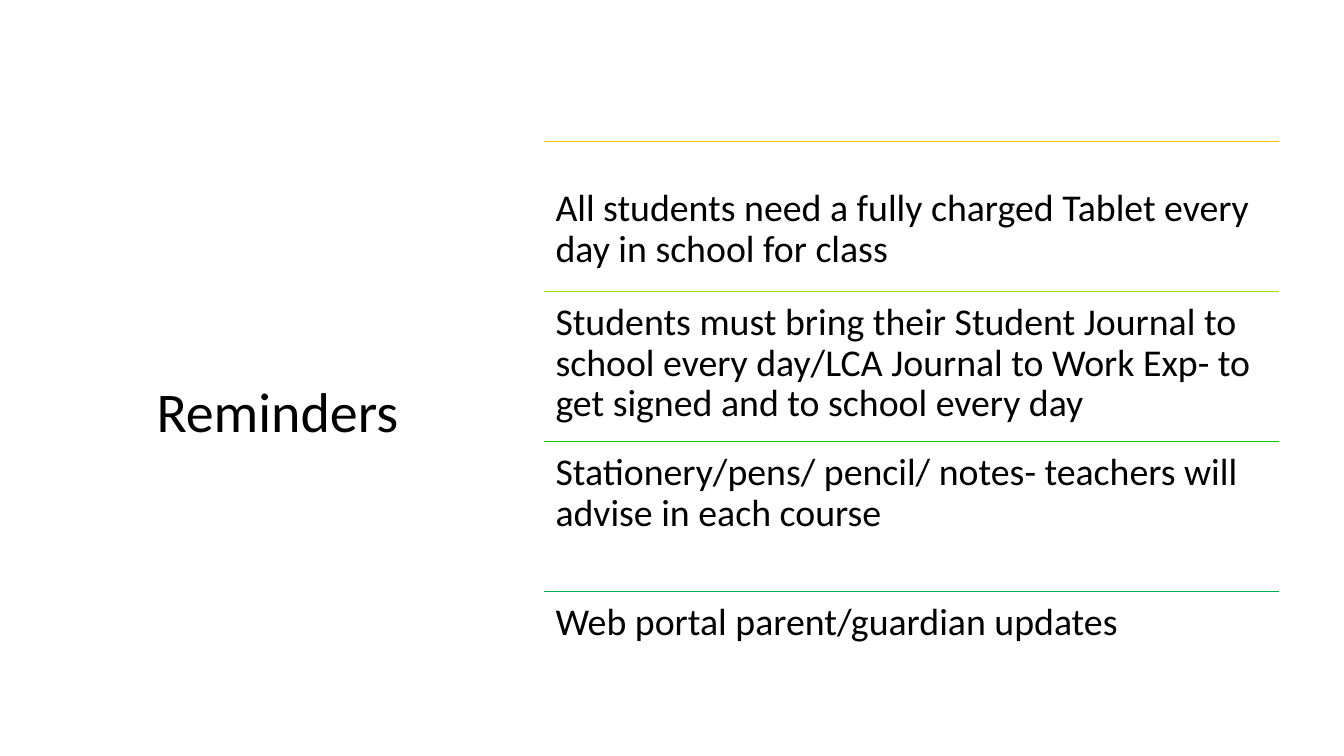
import pptx
import pptx.dml.color
import pptx.enum.shapes
import pptx.enum.text
import pptx.oxml
import pptx.oxml.ns
import pptx.util
from pptx.util import Pt

COLORS = {
    "text": "000000",
    "amber": "FFC000",
    "lime": "9BE500",
    "green": "17CA00",
    "emerald": "00B050",
}
FONT = "Calibri"

LIST_LEFT, LIST_TOP = 388.8, 100.8
LIST_WIDTH, ROW_HEIGHT = 524.9, 107.3
FIRST_TEXT_OFFSET = 25.9

REMINDERS = [
    ("amber", "All students need a fully charged Tablet every day in school for class"),
    ("lime", "Students must bring their Student Journal to school every day/LCA Journal "
             "to Work Exp- to get signed and to school every day"),
    ("green", "Stationery/pens/ pencil/ notes- teachers will advise in each course"),
    ("emerald", "Web portal parent/guardian updates"),
]


class SlideBuilder:
    """Holds the style and the current slide."""

    def __init__(self, slide, font, colors):
        self.slide = slide
        self.font = font
        self.colors = colors

    def color(self, name):
        return pptx.dml.color.RGBColor.from_string(self.colors[name])

    def text(self, content, left, top, width, height, size, insets=(7.2, 3.6),
             align=pptx.enum.text.PP_ALIGN.LEFT,
             anchor=pptx.enum.text.MSO_ANCHOR.TOP):
        shape = self.slide.shapes.add_textbox(Pt(left), Pt(top), Pt(width), Pt(height))
        text_frame = shape.text_frame
        text_frame.word_wrap = True
        text_frame.vertical_anchor = anchor
        text_frame.margin_left = text_frame.margin_right = Pt(insets[0])
        text_frame.margin_top = text_frame.margin_bottom = Pt(insets[1])
        text_frame.text = content
        paragraph = text_frame.paragraphs[0]
        paragraph.alignment = align
        paragraph.line_spacing = 0.9
        for run in paragraph.runs:
            run.font.name = self.font
            run.font.size = Pt(size)
            run.font.color.rgb = self.color("text")

    def rule(self, left, top, width, color):
        connector = self.slide.shapes.add_connector(
            pptx.enum.shapes.MSO_CONNECTOR.STRAIGHT,
            Pt(left), Pt(top), Pt(left + width), Pt(top))
        connector.line.color.rgb = self.color(color)
        connector.line.width = Pt(0.5)
        properties = connector._element.spPr
        properties.append(pptx.oxml.parse_xml(
            "<a:effectLst %s/>" % pptx.oxml.ns.nsdecls("a")))


def main():
    presentation = pptx.Presentation()
    presentation.slide_width = Pt(960)
    presentation.slide_height = Pt(540)
    slide = presentation.slides.add_slide(presentation.slide_layouts[6])
    builder = SlideBuilder(slide, FONT, COLORS)

    # Title
    builder.text("Reminders", 46.1, 132.5, 245.5, 188.6, 40,
                 align=pptx.enum.text.PP_ALIGN.RIGHT,
                 anchor=pptx.enum.text.MSO_ANCHOR.BOTTOM)

    # Ruled list of reminders; the first text sits lower in its row
    for index, (color, reminder) in enumerate(REMINDERS):
        top = LIST_TOP + index * ROW_HEIGHT
        text_top = top + (FIRST_TEXT_OFFSET if index == 0 else 0)
        builder.rule(LIST_LEFT, top, LIST_WIDTH, color)
        builder.text(reminder, LIST_LEFT, text_top, LIST_WIDTH, ROW_HEIGHT, 27,
                     insets=(8, 8))

    presentation.save("out.pptx")


if __name__ == "__main__":
    main()
